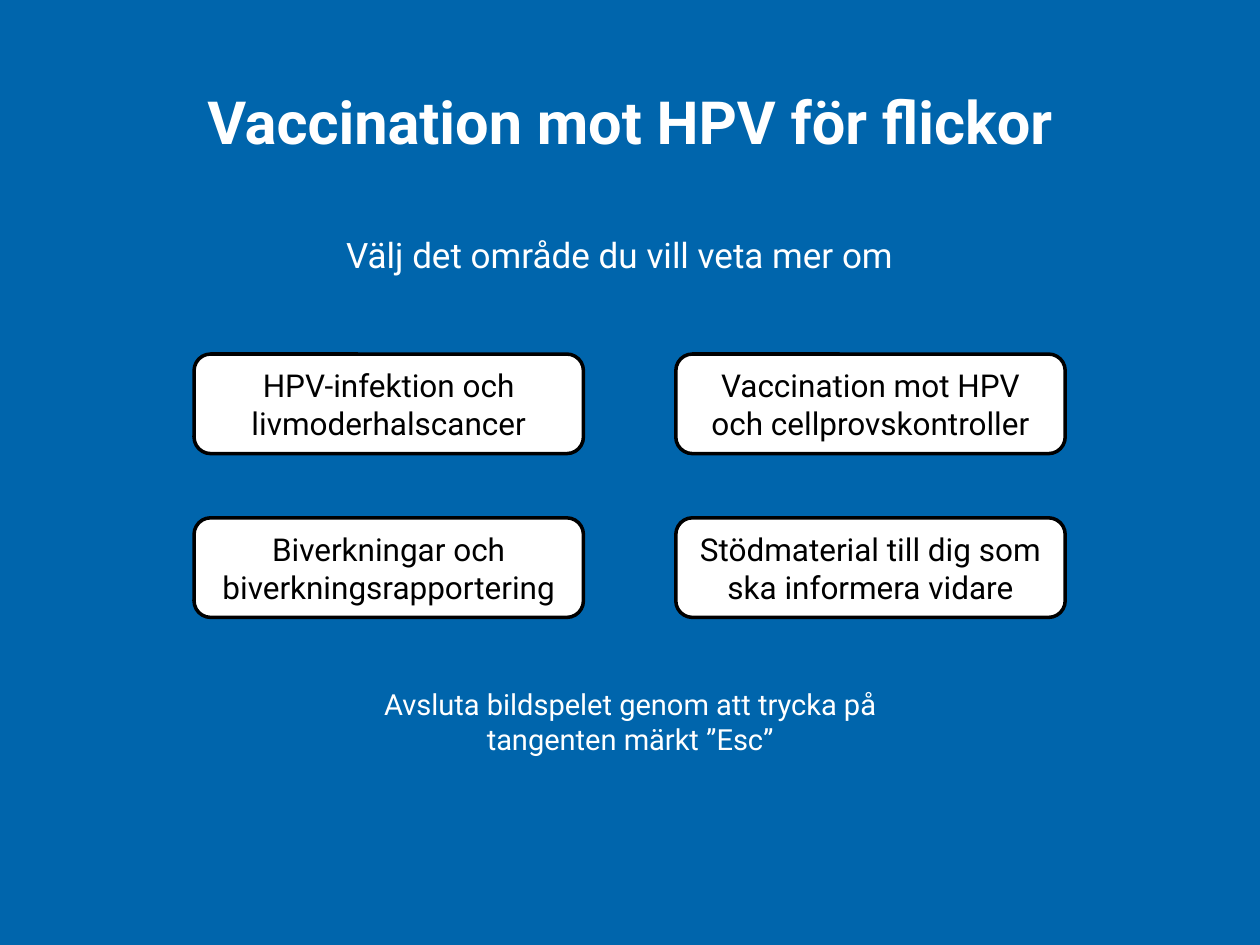
from pptx import Presentation
from pptx.dml.color import RGBColor
from pptx.enum.shapes import MSO_SHAPE
from pptx.enum.text import MSO_ANCHOR, PP_ALIGN
from pptx.util import Pt

ROUNDED = MSO_SHAPE.ROUNDED_RECTANGLE
CENTER = PP_ALIGN.CENTER
BOTTOM, MIDDLE, TOP = MSO_ANCHOR.BOTTOM, MSO_ANCHOR.MIDDLE, MSO_ANCHOR.TOP
FONT = "Roboto"
COLORS = {"background": "0065AC", "light": "FFFFFF", "dark": "000000"}
TOPICS = [
    [["HPV-infektion och", "livmoderhalscancer"],
     ["Vaccination mot HPV", "och cellprovskontroller"]],
    [["Biverkningar och biverkningsrapportering"],
     ["Stödmaterial till dig som ska informera vidare"]],
]


def color(name):
    """Return the named colour."""
    return RGBColor.from_string(COLORS[name])


def write_text(shape, lines, size, color_name, anchor, bold=False,
               spacing=None, inset=None):
    """Write centred lines into a shape as one paragraph."""
    frame = shape.text_frame
    frame.word_wrap = True
    frame.vertical_anchor = anchor
    if inset is not None:
        frame.margin_left = frame.margin_right = Pt(inset)
        frame.margin_top = frame.margin_bottom = Pt(inset)
    paragraph = frame.paragraphs[0]
    paragraph.alignment = CENTER
    if spacing:
        paragraph.line_spacing = Pt(spacing)
    for index, line in enumerate(lines):
        if index:
            paragraph.add_line_break()
        run = paragraph.add_run()
        run.text = line
        run.font.name = FONT
        run.font.size = Pt(size)
        run.font.bold = bold
        run.font.color.rgb = color(color_name)


def add_title(slide, left, top, width, height):
    """Place and format the title placeholder."""
    title = slide.shapes.title
    title.left, title.top = Pt(left), Pt(top)
    title.width, title.height = Pt(width), Pt(height)
    write_text(title, ["Vaccination mot HPV för flickor"], 34, "light",
               BOTTOM, bold=True, spacing=34, inset=0)


def add_prompt(slide, left, top, width, height):
    """Add the prompt above the topic buttons."""
    box = slide.shapes.add_textbox(Pt(left), Pt(top), Pt(width), Pt(height))
    write_text(box, ["Välj det område du vill veta mer om"], 20, "light",
               TOP, spacing=23, inset=0)


def add_topic_grid(slide, left, top, width, height):
    """Add the topic buttons in a two by two grid filling the box."""
    button_width, button_height = 222.5, 56.9
    column_step = width - button_width
    row_step = height - button_height
    for row, topics in enumerate(TOPICS):
        for column, lines in enumerate(topics):
            button = slide.shapes.add_shape(
                ROUNDED, Pt(left + column * column_step),
                Pt(top + row * row_step), Pt(button_width), Pt(button_height))
            button.shadow.inherit = False
            button.fill.solid()
            button.fill.fore_color.rgb = color("light")
            button.line.color.rgb = color("dark")
            button.line.width = Pt(2)
            write_text(button, lines, 18, "dark", MIDDLE)


def add_exit_hint(slide, left, top, width, height):
    """Add the hint on how to leave the show."""
    box = slide.shapes.add_textbox(Pt(left), Pt(top), Pt(width), Pt(height))
    write_text(box, ["Avsluta bildspelet genom att trycka på",
                     "tangenten märkt ”Esc”"], 16.6, "light", TOP)


def main():
    """Build and save the topic menu slide."""
    presentation = Presentation()
    presentation.slide_width, presentation.slide_height = Pt(720), Pt(540)
    slide = presentation.slides.add_slide(presentation.slide_layouts[5])
    slide.background.fill.solid()
    slide.background.fill.fore_color.rgb = color("background")
    add_title(slide, 54, 0, 612, 89.3)
    add_prompt(slide, 48.2, 134.6, 612, 33.1)
    add_topic_grid(slide, 110.9, 202.3, 497.8, 150.5)
    add_exit_hint(slide, 167, 388.8, 386, 47.5)
    presentation.save("out.pptx")


if __name__ == "__main__":
    main()
